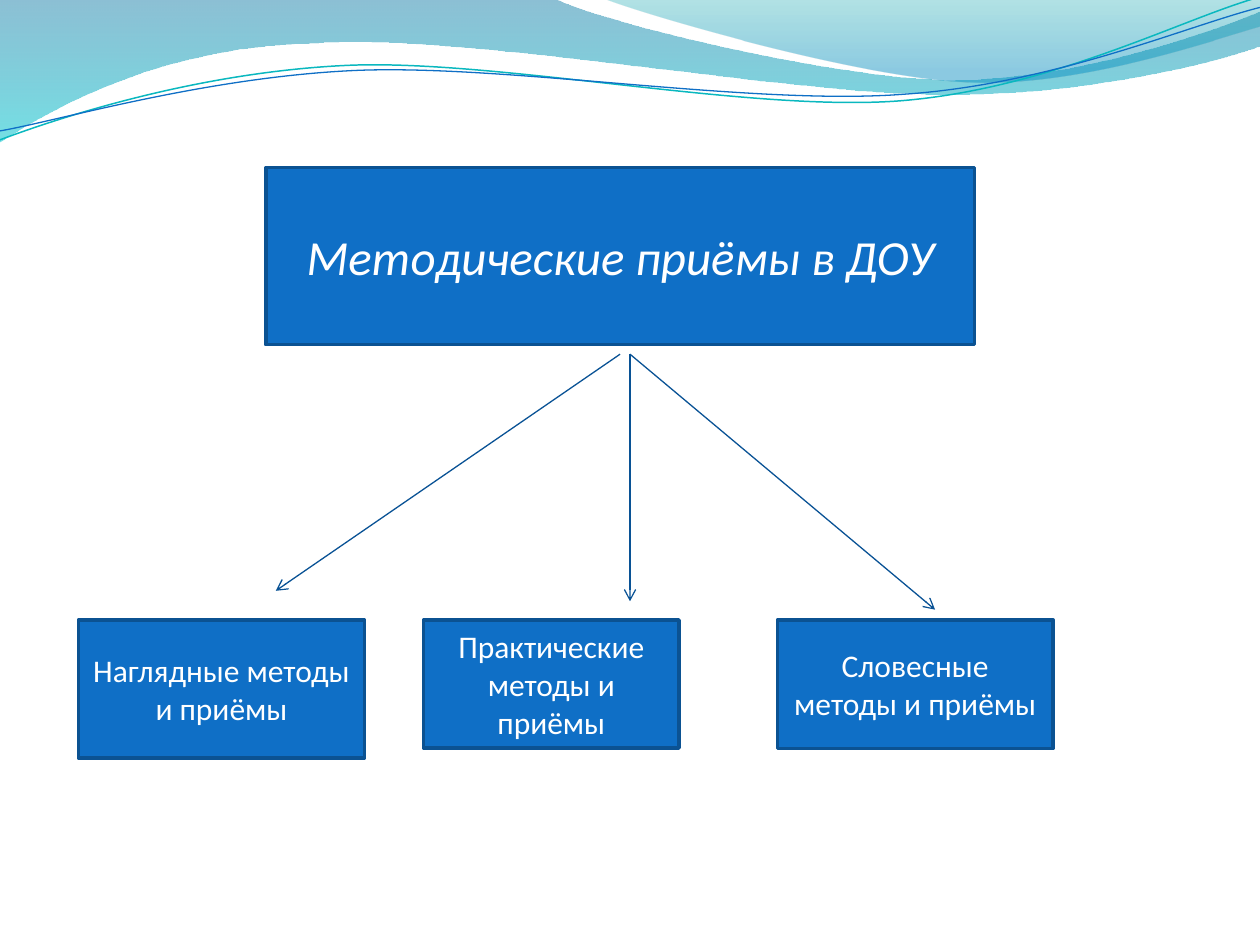
from lxml.etree import SubElement
from pptx import Presentation
from pptx.dml.color import RGBColor
from pptx.enum.shapes import MSO_CONNECTOR, MSO_SHAPE
from pptx.enum.text import MSO_ANCHOR, PP_ALIGN
from pptx.oxml.ns import qn
from pptx.util import Cm, Pt

# Each wave is a start point, then lines (x, y) or curves (two controls, end), in cm.
BAND = [(0, 0), (11.18, -0.03),
        (12.09, 0.43, 16.87, 1.6, 19.25, 1.6),
        (21.67, 1.6, 24.33, 0.66, 25.4, 0.23), (25.43, 0.91),
        (24.97, 1.12, 22.1, 1.93, 18.95, 1.9),
        (15.8, 1.9, 9.7, 0.71, 6.53, 0.86),
        (3.28, 0.91, 1.17, 2.11, -0.03, 2.87), (0, 0)]
CREST = [(12.17, -0.03),
         (12.93, 0.28, 17.32, 1.57, 19.53, 1.65),
         (21.74, 1.75, 24.41, 0.81, 25.4, 0.53), (25.4, 0), (12.17, -0.03)]
TEAL = [(-0.05, 2.22),
        (1.19, 1.82, 4.02, 1.04, 7.05, 1.05),
        (10.05, 1.07, 15.02, 2.37, 18.08, 2.29),
        (21.13, 2.2, 23.86, 0.91, 25.41, 0.55)]
BLUE = [(-0.04, 2.04),
        (1.16, 1.89, 4.17, 1.15, 7.2, 1.16),
        (10.25, 1.18, 15.13, 2.25, 18.19, 2.16),
        (21.22, 2.1, 23.93, 1.06, 25.45, 0.75)]
TILT = 357.3

METHODS = [("Наглядные методы и приёмы", 1.58, 5.77, 2.78),
           ("Практические методы и приёмы", 8.54, 5.15, 2.58),
           ("Словесные методы и приёмы", 15.67, 5.56, 2.59)]
ARROWS = [(12.5, 5.56, 11.91), (12.7, 18.85, 12.29), (12.7, 12.7, 12.12)]


def rgb(code):
    return RGBColor.from_string(code)


def set_line(shape, color, width):
    shape.line.color.rgb = rgb(color)
    shape.line.width = Pt(width)


def bend(shape, wave):
    """Join the three lines of each curved part into one Bézier segment."""
    lines = iter(list(shape.element.iter(qn("a:lnTo"))))
    for part in wave[1:]:
        group = [next(lines) for _ in range(len(part) // 2)]
        if len(group) == 1:
            continue
        curve = group[0].makeelement(qn("a:cubicBezTo"))
        group[0].addprevious(curve)
        for line in group:
            curve.append(line[0])
            line.getparent().remove(line)


def add_wave(slide, wave, close):
    spots = [(Cm(part[i]), Cm(part[i + 1]))
             for part in wave for i in range(0, len(part), 2)]
    form = slide.shapes.build_freeform(*spots[0])
    form.add_line_segments(spots[1:], close=close)
    shape = form.convert_to_shape()
    bend(shape, wave)
    shape.shadow.inherit = False
    return shape


def add_band(slide, wave, stops):
    """Add a wave with a downward gradient; stops are (position, color, opacity %)."""
    shape = add_wave(slide, wave, True)
    shape.line.fill.background()
    fill = shape.fill
    fill.gradient()
    fill.gradient_angle = 270
    for stop, (place, color, _) in zip(fill.gradient_stops, stops):
        stop.position = place
        stop.color.rgb = rgb(color)
    tags = shape.element.spPr.iter(qn("a:srgbClr"))
    for tag, (_, _, alpha) in zip(tags, stops):
        SubElement(tag, qn("a:alpha"), val=str(alpha * 1000))


def add_curve(slide, wave, color, width):
    shape = add_wave(slide, wave, False)
    shape.rotation = TILT
    shape.fill.background()
    set_line(shape, color, width)


def add_box(slide, text, left, top, width, height, size=18, italic=None):
    shape = slide.shapes.add_shape(MSO_SHAPE.FLOWCHART_PROCESS, Cm(left), Cm(top),
                                   Cm(width), Cm(height))
    shape.shadow.inherit = False
    shape.fill.solid()
    shape.fill.fore_color.rgb = rgb("0F6FC6")
    set_line(shape, "0B5292", 2)
    frame = shape.text_frame
    frame.word_wrap = True
    frame.vertical_anchor = MSO_ANCHOR.MIDDLE
    frame.text = text
    para = frame.paragraphs[0]
    para.alignment = PP_ALIGN.CENTER
    font = para.runs[0].font
    font.name = "Calibri"
    font.size = Pt(size)
    font.italic = italic
    font.color.rgb = rgb("FFFFFF")


def add_arrow(slide, x1, y1, x2, y2):
    line = slide.shapes.add_connector(MSO_CONNECTOR.STRAIGHT,
                                      Cm(x1), Cm(y1), Cm(x2), Cm(y2))
    set_line(line, "095295", 0.75)
    props = line.element.spPr
    SubElement(props.find(qn("a:ln")), qn("a:tailEnd"), type="arrow")
    SubElement(props, qn("a:effectLst"))


def main():
    deck = Presentation()
    deck.slide_width, deck.slide_height = Cm(25.4), Cm(19.05)
    slide = deck.slides.add_slide(deck.slide_layouts[6])

    add_band(slide, BAND, [(0, "0074A1", 45), (1, "00C6CF", 55)])
    add_band(slide, CREST, [(0, "00A1A9", 30), (0.8, "008BBF", 45)])
    add_curve(slide, TEAL, "0AB8BF", 0.85)
    add_curve(slide, BLUE, "0F6FC6", 0.75)

    for text, left, width, height in METHODS:
        add_box(slide, text, left, 12.5, width, height)
    add_box(slide, "Методические приёмы в ДОУ", 5.36, 3.38, 14.29, 3.57, 28, True)
    for start, end, foot in ARROWS:
        add_arrow(slide, start, 7.14, end, foot)

    deck.save("out.pptx")


if __name__ == "__main__":
    main()
